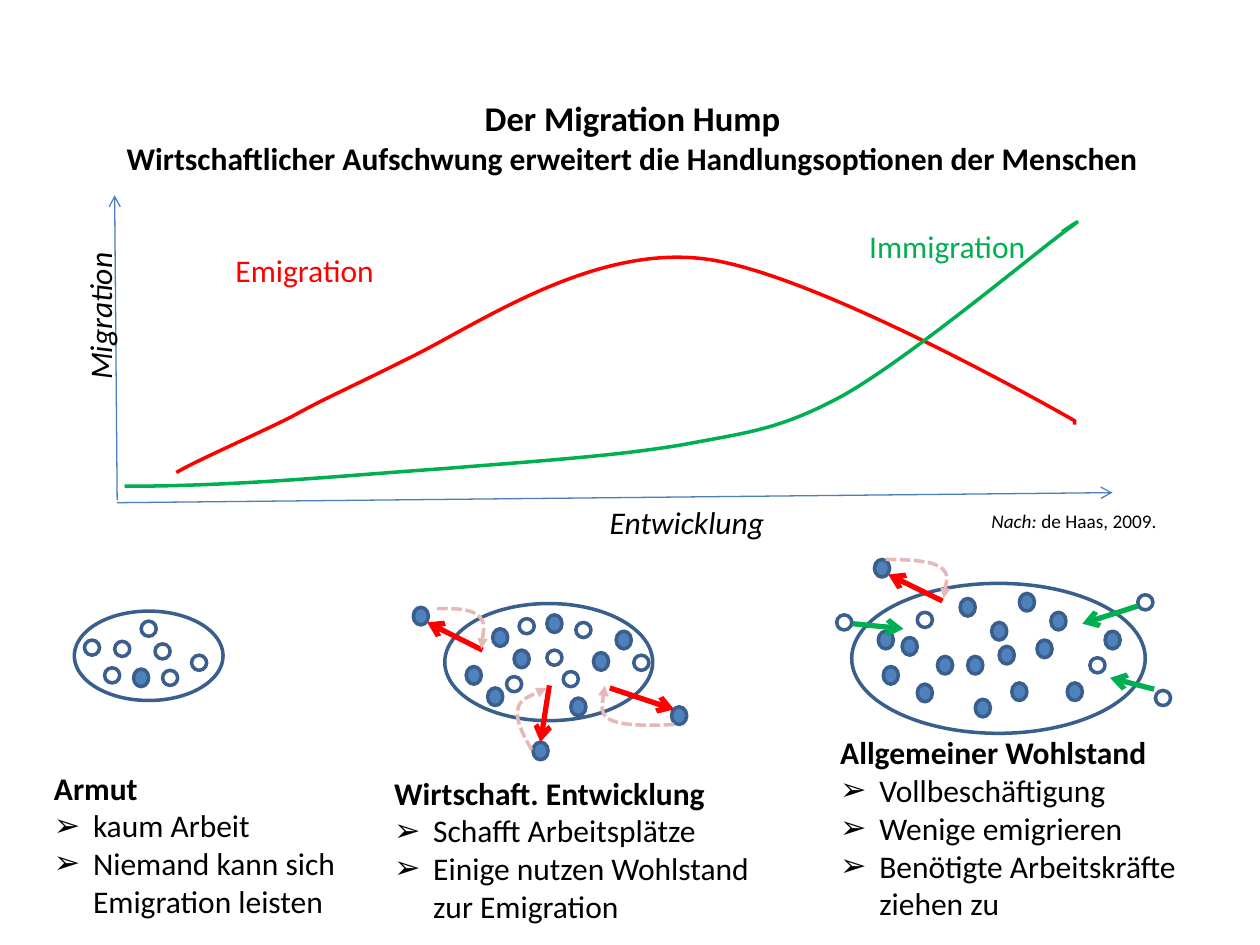
import math

from lxml import etree
from pptx import Presentation, util as u
from pptx.dml.color import RGBColor
from pptx.enum import dml, shapes, text
from pptx.oxml.ns import qn

COLORS = {"black": "000000", "red": "FF0000", "green": "00B050", "axis": "4B7EBC",
          "outline": "3A5F8C", "dot": "4F81BD", "pink": "E6B9B8"}

deck = Presentation()
deck.slide_width, deck.slide_height = u.Inches(10), u.Inches(7.5)
page = deck.slides.add_slide(deck.slide_layouts[6])


def style_line(shape, color, width, head=None, dash=None):
    """Set the outline, with an optional arrowhead at its end, and drop the shadow."""
    shape.line.color.rgb = RGBColor.from_string(COLORS[color])
    shape.line.width = u.Pt(width)
    if dash:
        shape.line.dash_style = dash
    properties = shape.element.spPr
    if head:
        etree.SubElement(properties.find(qn("a:ln")), qn("a:tailEnd"), type=head)
    etree.SubElement(properties, qn("a:effectLst"))


def add_text(frame, lines, color="black", size=18, italic=None, align=None, wrap=True):
    """Add a text box with one paragraph for each line."""
    box = page.shapes.add_textbox(*map(u.Inches, frame))
    box.text_frame.word_wrap = wrap
    for index, line in enumerate(lines):
        para = box.text_frame.paragraphs[0] if index == 0 else box.text_frame.add_paragraph()
        para.alignment = align
        para.font.name = "Calibri"
        para.font.size = u.Pt(size)
        para.font.italic = italic
        para.font.color.rgb = RGBColor.from_string(COLORS[color])
        para.text = line
    return box


# Title and source
title = add_text((0.52, 0.62, 9, 0.93), ["Der Migration Hump"], align=text.PP_ALIGN.CENTER)
title.text_frame.vertical_anchor = text.MSO_ANCHOR.MIDDLE
para = title.text_frame.paragraphs[0]
para.font.bold = True
para.runs[0].font.size = u.Pt(19.8)
para.add_line_break()
para.add_run().text = "Wirtschaftlicher Aufschwung erweitert die Handlungsoptionen der Menschen"

source = add_text((7.77, 3.99, 1.56, 0.29), ["Nach: "], size=11, wrap=False)
para = source.text_frame.paragraphs[0]
para.runs[0].font.italic = True
para.add_run().text = "de Haas, 2009."

# Stages of development: heading and bullets
stages = [
    ((0.33, 6.05, 2.68, 1.31),
     ["Armut", "kaum Arbeit", "Niemand kann sich Emigration leisten"]),
    ((3.03, 6.09, 3.12, 1.31),
     ["Wirtschaft. Entwicklung", "Schafft Arbeitsplätze",
      "Einige nutzen Wohlstand zur Emigration"]),
    ((6.57, 5.77, 3.29, 1.62),
     ["Allgemeiner Wohlstand", "Vollbeschäftigung", "Wenige emigrieren",
      "Benötigte Arbeitskräfte ziehen zu"]),
]
for frame, lines in stages:
    heading, *bullets = add_text(frame, lines).text_frame.paragraphs
    heading.font.bold = True
    for bullet in bullets:
        properties = bullet._p.get_or_add_pPr()
        properties.set("marL", str(u.Inches(0.31)))
        properties.set("indent", str(-u.Inches(0.31)))
        properties.insert(0, etree.Element(qn("a:buFont"), typeface="Arial"))
        properties.insert(1, etree.Element(qn("a:buChar"), char="➢"))

# Countries
for frame in [(0.59, 4.85, 1.18, 0.71), (3.53, 4.79, 1.65, 0.93), (6.76, 4.63, 2.33, 1.19)]:
    country = page.shapes.add_shape(shapes.MSO_SHAPE.OVAL, *map(u.Inches, frame))
    country.fill.background()
    style_line(country, "outline", 2)

# People: filled dots have work, open ones do not
employed = [
    (1.06, 5.31),
    (3.91, 4.99), (3.7, 5.29), (4.71, 5.18), (3.87, 5.46), (4.89, 5.01), (4.08, 5.16),
    (4.34, 4.88), (4.53, 5.54), (5.33, 5.61), (4.23, 5.89), (3.28, 4.82),
    (6.97, 5.01), (8.47, 5.42), (7.44, 5.21), (8.09, 4.71), (8.34, 4.86), (7.93, 5.13),
    (7.87, 4.94), (7.01, 5.29), (8.77, 5.01), (8.23, 5.08), (7.62, 4.75), (8.03, 5.42),
    (7.28, 5.43), (7.68, 5.21), (7.16, 5.06), (7.74, 5.55), (6.94, 4.44),
]
unemployed = [
    (1.12, 4.93), (1.52, 5.2), (1.23, 5.11), (0.67, 5.08), (0.91, 5.09), (0.83, 5.3),
    (1.29, 5.32),
    (4.02, 5.37), (4.34, 5.16), (4.47, 5.33), (4.57, 4.94), (5.03, 5.2), (4.12, 4.91),
    (7.28, 4.86), (9.17, 5.48), (8.65, 5.22), (6.64, 4.88), (9.03, 4.72),
]
for people, height, filled in [(employed, 0.14, True), (unemployed, 0.12, False)]:
    for left, top in people:
        person = page.shapes.add_shape(
            shapes.MSO_SHAPE.FLOWCHART_CONNECTOR,
            *map(u.Inches, (left, top, 0.12, height)))
        if filled:
            person.fill.solid()
            person.fill.fore_color.rgb = RGBColor.from_string(COLORS["dot"])
        else:
            person.fill.background()
        style_line(person, "outline", 2)

# Migration arrows and chart axes
arrows = [
    ("red", 3, (3.83, 5.16, 3.39, 4.94)),
    ("red", 3, (7.48, 4.77, 7.05, 4.56)),
    ("red", 3, (4.36, 5.44, 4.29, 5.89)),
    ("red", 3, (4.84, 5.46, 5.35, 5.63)),
    ("green", 3, (9.16, 5.47, 8.81, 5.38)),
    ("green", 3, (6.77, 4.95, 7.17, 4.99)),
    ("green", 3, (9.03, 4.81, 8.59, 4.95)),
    ("axis", 0.75, (0.93, 3.99, 8.83, 3.91)),
    ("axis", 0.75, (0.93, 3.97, 0.91, 1.55)),
]
for color, width, ends in arrows:
    arrow = page.shapes.add_connector(shapes.MSO_CONNECTOR.STRAIGHT, *map(u.Inches, ends))
    style_line(arrow, color, width, head="arrow")

# Chart labels
add_text((6.8, 1.75, 1.76, 0.4), ["Immigration"], "green")
add_text((1.77, 1.94, 1.76, 0.4), ["Emigration"], "red")
add_text((4.74, 3.94, 1.76, 0.4), ["Entwicklung"], italic=True)
migration = add_text((0.03, 2.31, 1.52, 0.4), ["Migration"], italic=True,
                     align=text.PP_ALIGN.CENTER)
migration.rotation = 270

# Curves: colour, frame, rotation, and page points (a start, three per Bézier segment,
# then single points joined by straight lines)
curves = [
    ("red", (1.4, 2.04, 7.13, 1.71), 0,
     [(1.4, 3.75), (1.55, 3.66), (2.01, 3.46), (2.31, 3.31), (2.6, 3.15), (2.69, 3.12),
      (3.23, 2.85), (3.77, 2.59), (4.66, 1.96), (5.55, 2.05), (6.43, 2.13), (8.53, 3.34),
      (8.53, 3.34)], [(8.53, 3.34), (8.53, 3.37)]),
    ("green", (0.99, 1.76, 7.56, 2.1), 0,
     [(0.99, 3.86), (1.91, 3.86), (2.78, 3.77), (3.52, 3.72), (4.26, 3.66), (4.89, 3.62),
      (5.42, 3.53), (5.95, 3.43), (6.19, 3.41), (6.69, 3.14), (7.19, 2.86), (8.13, 2.08),
      (8.42, 1.86), (8.71, 1.65), (8.43, 1.84), (8.43, 1.84)], [(8.43, 1.84)]),
    ("pink", (3.47, 4.83, 0.36, 0.33), 0,
     [(3.47, 4.83), (3.61, 4.83), (3.74, 4.83), (3.8, 4.89), (3.86, 4.94), (3.82, 5.15),
      (3.82, 5.15)], [(3.82, 5.15)]),
    ("pink", (4.1, 5.52, 0.36, 0.36), 237.5,
     [(4.22, 5.95), (4.15, 5.83), (4.09, 5.71), (4.11, 5.63), (4.12, 5.55), (4.34, 5.46),
      (4.34, 5.46)], [(4.34, 5.46)]),
    ("pink", (4.78, 5.43, 0.56, 0.34), 177.1,
     [(5.35, 5.75), (5.14, 5.76), (4.93, 5.76), (4.84, 5.71), (4.75, 5.66), (4.8, 5.44),
      (4.8, 5.44)], [(4.8, 5.44)]),
    ("pink", (7.03, 4.44, 0.47, 0.31), 0,
     [(7.03, 4.44), (7.21, 4.44), (7.39, 4.45), (7.46, 4.5), (7.54, 4.55), (7.49, 4.75),
      (7.49, 4.75)], [(7.49, 4.75)]),
]
for color, (left, top, width, height), rotation, bends, ends in curves:
    builder = page.shapes.build_freeform(u.Inches(left), u.Inches(top))
    builder.add_line_segments([(u.Inches(left + width), u.Inches(top + height))], close=False)
    curve = builder.convert_to_shape()
    curve.rotation = rotation
    curve.fill.background()

    outline = curve.element.spPr.find(".//" + qn("a:path"))
    for command in list(outline):
        outline.remove(command)
    commands = [("moveTo", bends[:1])]
    commands += [("cubicBezTo", bends[i:i + 3]) for i in range(1, len(bends), 3)]
    commands += [("lnTo", [end]) for end in ends]
    cos, sin = math.cos(math.radians(rotation)), math.sin(math.radians(rotation))
    for name, points in commands:
        command = etree.SubElement(outline, qn("a:" + name))
        for x, y in points:
            # Turn the point back around the centre, as the shape itself is rotated
            dx, dy = x - left - width / 2, y - top - height / 2
            etree.SubElement(command, qn("a:pt"),
                             x=str(u.Inches(width / 2 + dx * cos + dy * sin)),
                             y=str(u.Inches(height / 2 - dx * sin + dy * cos)))
    if color == "pink":
        style_line(curve, color, 2, head="triangle", dash=dml.MSO_LINE.SQUARE_DOT)
    else:
        style_line(curve, color, 2)

deck.save("out.pptx")
